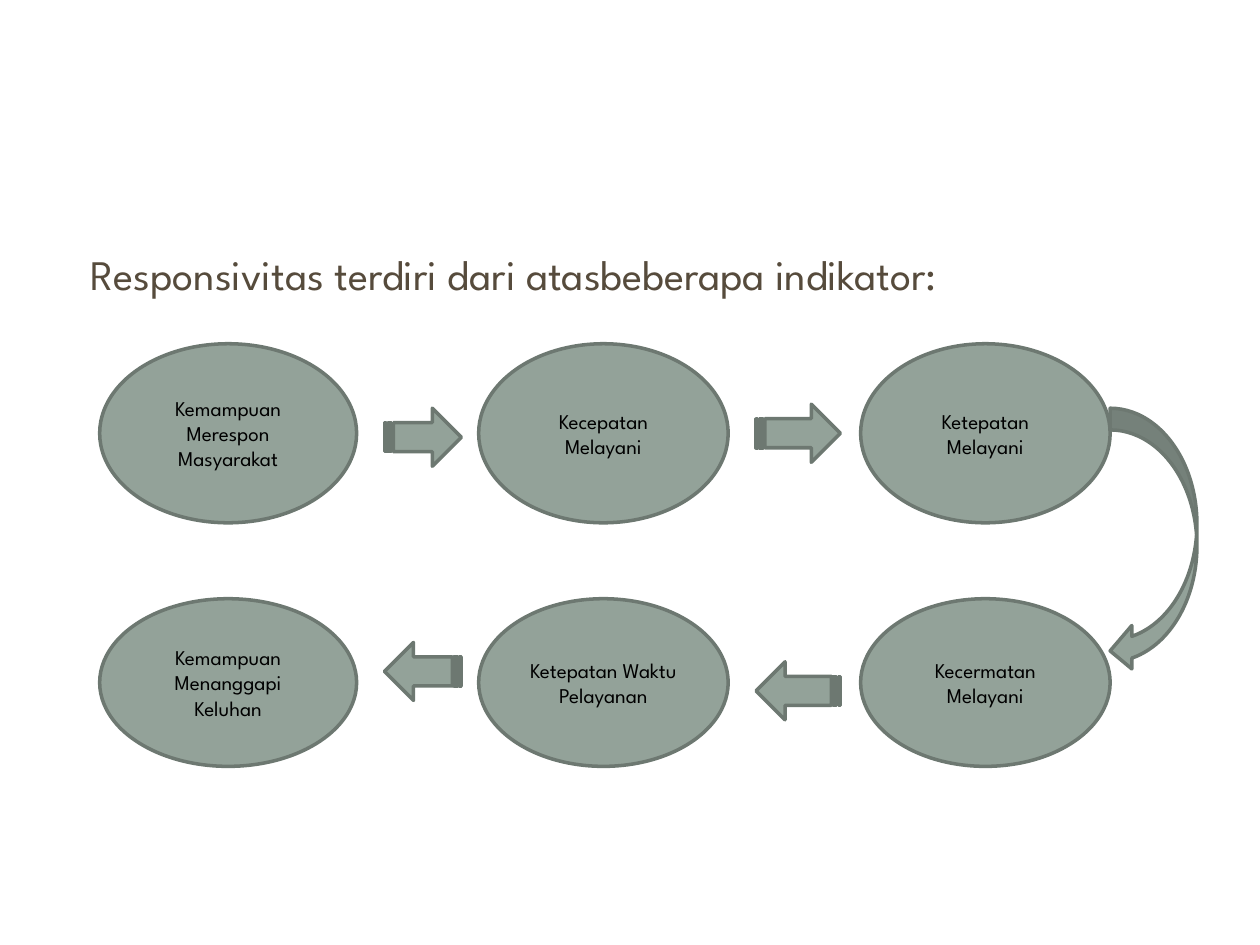
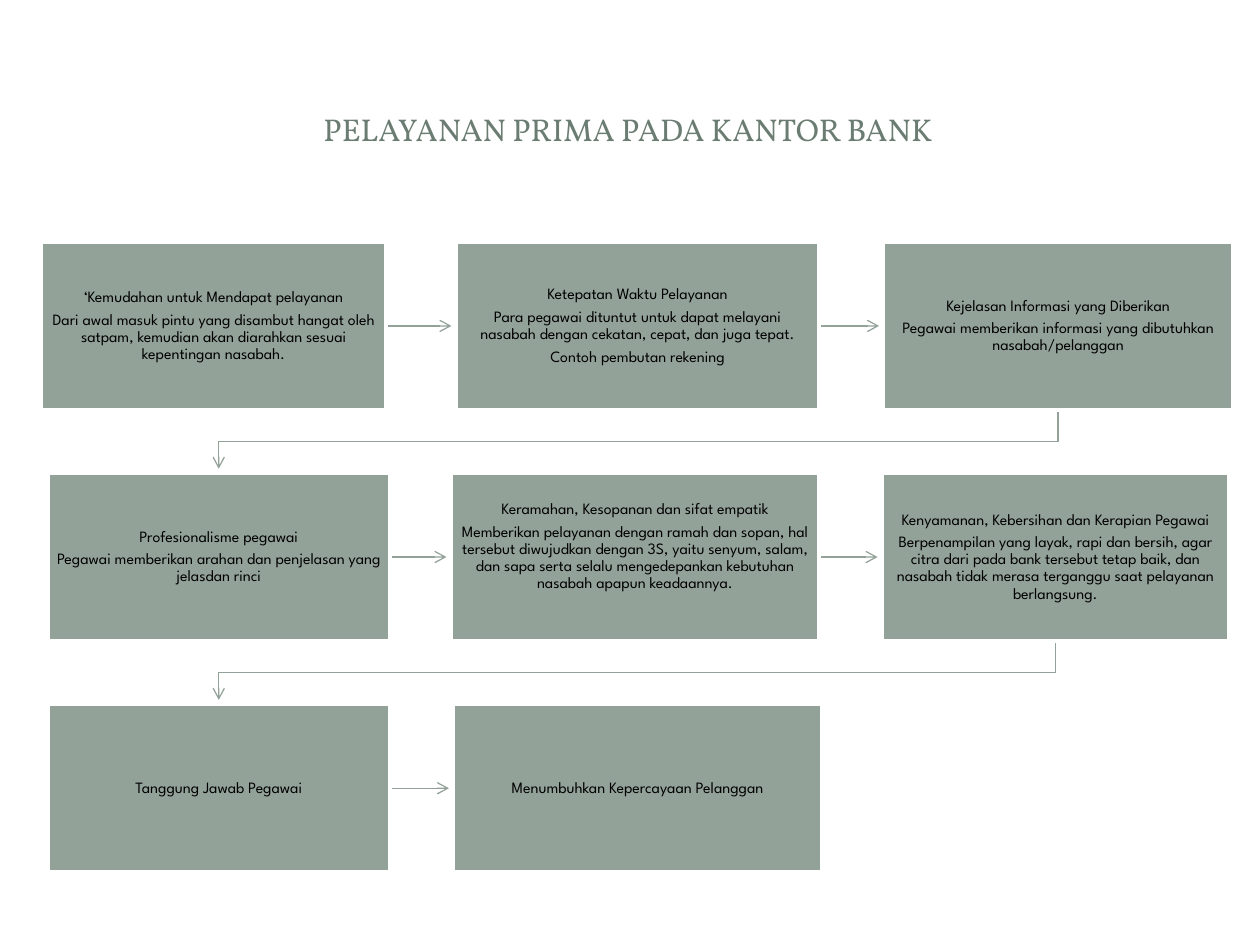
from dataclasses import dataclass
from itertools import pairwise

from lxml.etree import SubElement
from pptx import Presentation
from pptx.dml.color import RGBColor
from pptx.enum.shapes import MSO_CONNECTOR, MSO_SHAPE
from pptx.enum.text import MSO_ANCHOR, PP_ALIGN
from pptx.oxml.ns import qn
from pptx.util import Cm, Pt


@dataclass(frozen=True)
class Theme:
    sage: RGBColor = RGBColor(0x93, 0xA2, 0x99)
    sage_edge: RGBColor = RGBColor(0x6D, 0x78, 0x71)
    title: RGBColor = RGBColor(0x6B, 0x7D, 0x72)
    lead: RGBColor = RGBColor(0x56, 0x4B, 0x3C)
    ink: RGBColor = RGBColor(0, 0, 0)
    white: RGBColor = RGBColor(0xFF, 0xFF, 0xFF)
    title_font: str = "Vollkorn"
    body_font: str = "League Spartan"
    title_size: int = 18
    lead_size: int = 24
    indicator_size: int = 12
    card_size: int = 9
    outline: float = 2
    link: float = 0.75


THEME = Theme()


@dataclass(frozen=True)
class Box:
    """A rectangle in centimetres."""
    left: float
    top: float
    width: float
    height: float

    def inner(self, left, top, width, height):
        return Box(self.left + left, self.top + top, width, height)

    @property
    def right(self):
        return self.left + self.width

    @property
    def bottom(self):
        return self.top + self.height

    @property
    def center(self):
        return self.left + self.width / 2

    @property
    def middle(self):
        return self.top + self.height / 2

    def lengths(self):
        return [Cm(n) for n in (self.left, self.top, self.width, self.height)]


TITLE_BOX = Box(1.19, 1.14, 22.94, 2.9)
LEAD_BOX = Box(1.27, 4.88, 22.86, 1.6)
INDICATOR_BOX = Box(2.01, 6.93, 22.12, 8.52)
CARD_BOX = Box(0.84, 4.88, 24.01, 12.7)

# Left and width of each column, top and height of each row
INDICATOR_COLUMNS = [(0, 5.18), (7.64, 5.03), (15.34, 5.03)]
INDICATOR_ROWS = [(0, 3.61), (5.14, 3.38)]
INDICATORS = [
    ["Kemampuan Merespon Masyarakat", "Kecepatan Melayani", "Ketepatan Melayani"],
    ["Kemampuan Menanggapi Keluhan", "Ketepatan Waktu Pelayanan", "Kecermatan Melayani"],
]
# Left, top, width and rotation
STRIPED_ARROWS = [
    (5.74, 1.3, 1.55, 0), (13.23, 1.22, 1.7, 0),
    (13.23, 6.41, 1.7, 180), (5.74, 6.02, 1.55, 180),
]
ARROW_HEIGHT = 1.17

CARD_HEIGHT = 3.38
CARD_PITCH = 4.66
LINK_START_GAP = 0.05
LINK_END_GAP = 0.09
CARD_INSET = 0.18
RAISED_INSET = 0.6
# Left, width, paragraphs and bottom inset of each card
CARDS = [
    [
        (0, 6.93, ["‘Kemudahan untuk Mendapat pelayanan",
                   "Dari awal masuk pintu yang disambut hangat oleh satpam, "
                   "kemudian akan diarahkan sesuai kepentingan nasabah."], CARD_INSET),
        (8.35, 7.32, ["Ketepatan Waktu Pelayanan",
                      "Para pegawai dituntut untuk dapat melayani nasabah dengan "
                      "cekatan, cepat, dan juga tepat.",
                      "Contoh pembutan rekening"], CARD_INSET),
        (16.97, 7.04, ["Kejelasan Informasi yang Diberikan",
                       "Pegawai memberikan informasi yang dibutuhkan "
                       "nasabah/pelanggan"], CARD_INSET),
    ],
    [
        (0.13, 6.88, ["Profesionalisme pegawai",
                      "Pegawai memberikan arahan dan penjelasan yang jelasdan "
                      "rinci"], CARD_INSET),
        (8.25, 7.42, ["Keramahan, Kesopanan dan sifat empatik",
                      "Memberikan pelayanan dengan ramah dan sopan, hal tersebut "
                      "diwujudkan dengan 3S, yaitu senyum, salam, dan sapa serta "
                      "selalu mengedepankan kebutuhan nasabah apapun keadaannya."],
         RAISED_INSET),
        (16.94, 6.99, ["Kenyamanan, Kebersihan dan Kerapian Pegawai",
                       "Berpenampilan yang layak, rapi dan bersih, agar citra dari "
                       "pada bank tersebut tetap baik, dan nasabah tidak merasa "
                       "terganggu saat pelayanan berlangsung."], CARD_INSET),
    ],
    [
        (0.13, 6.88, ["Tanggung Jawab Pegawai"], CARD_INSET),
        (8.3, 7.42, ["Menumbuhkan Kepercayaan Pelanggan"], CARD_INSET),
    ],
]


def write(frame, paragraphs, size, color=THEME.ink, font=THEME.body_font,
          align=PP_ALIGN.CENTER, anchor=MSO_ANCHOR.MIDDLE):
    frame.word_wrap = True
    frame.vertical_anchor = anchor
    frame.text = "\n".join(paragraphs)
    for paragraph in frame.paragraphs:
        paragraph.alignment = align
        for run in paragraph.runs:
            run.font.name = font
            run.font.size = Pt(size)
            run.font.color.rgb = color


def add_filled(slide, kind, box, edge):
    shape = slide.shapes.add_shape(kind, *box.lengths())
    shape.shadow.inherit = False
    shape.fill.solid()
    shape.fill.fore_color.rgb = THEME.sage
    shape.line.color.rgb = edge
    shape.line.width = Pt(THEME.outline)
    return shape


def style_link(link):
    """Give a connector or open outline the thin line with an arrowhead."""
    link.line.color.rgb = THEME.sage
    link.line.width = Pt(THEME.link)
    SubElement(link.line._get_or_add_ln(), qn("a:tailEnd"), type="arrow")


def link_across(slide, start, end):
    y = Cm(start.middle)
    link = slide.shapes.add_connector(
        MSO_CONNECTOR.STRAIGHT, Cm(start.right + LINK_START_GAP), y,
        Cm(end.left - LINK_END_GAP), y)
    style_link(link)
    SubElement(link._element.spPr, qn("a:effectLst"))


def link_to_next_row(slide, start, end):
    turn = (start.bottom + end.top) / 2
    points = [(start.center, start.bottom + LINK_START_GAP), (start.center, turn),
              (end.center, turn), (end.center, end.top - LINK_END_GAP)]
    first, *rest = [(Cm(x), Cm(y)) for x, y in points]
    outline = slide.shapes.build_freeform(*first)
    outline.add_line_segments(rest, close=False)
    link = outline.convert_to_shape()
    link.fill.background()
    style_link(link)
    link.shadow.inherit = False


def add_title(slide, box, text):
    frame = slide.shapes.add_textbox(*box.lengths()).text_frame
    write(frame, [text], THEME.title_size, THEME.title, THEME.title_font)


def add_lead(slide, box, text):
    frame = slide.shapes.add_textbox(*box.lengths()).text_frame
    write(frame, [text], THEME.lead_size, THEME.lead,
          align=PP_ALIGN.LEFT, anchor=MSO_ANCHOR.TOP)
    frame.margin_left = Cm(0.56)
    frame.paragraphs[0].space_before = Pt(0.2 * THEME.lead_size)


def add_indicators(slide, box):
    for (top, height), names in zip(INDICATOR_ROWS, INDICATORS):
        for (left, width), name in zip(INDICATOR_COLUMNS, names):
            oval = add_filled(slide, MSO_SHAPE.OVAL,
                              box.inner(left, top, width, height), THEME.sage_edge)
            write(oval.text_frame, [name], THEME.indicator_size)
    for left, top, width, rotation in STRIPED_ARROWS:
        arrow = add_filled(slide, MSO_SHAPE.STRIPED_RIGHT_ARROW,
                           box.inner(left, top, width, ARROW_HEIGHT), THEME.sage_edge)
        arrow.rotation = rotation
    add_filled(slide, MSO_SHAPE.CURVED_LEFT_ARROW,
               box.inner(20.37, 1.3, 1.75, 5.33), THEME.sage_edge)


def add_card(slide, box, paragraphs, bottom_inset):
    frame = add_filled(slide, MSO_SHAPE.RECTANGLE, box, THEME.white).text_frame
    write(frame, paragraphs, THEME.card_size)
    frame.margin_left = frame.margin_right = frame.margin_top = Cm(CARD_INSET)
    frame.margin_bottom = Cm(bottom_inset)
    for paragraph in frame.paragraphs:
        paragraph.line_spacing = 0.9
        paragraph.space_after = Pt(0.35 * THEME.card_size)


def add_card_flow(slide, box):
    rows = []
    for index, row in enumerate(CARDS):
        places = []
        for left, width, paragraphs, bottom_inset in row:
            place = box.inner(left, index * CARD_PITCH, width, CARD_HEIGHT)
            add_card(slide, place, paragraphs, bottom_inset)
            places.append(place)
        for start, end in pairwise(places):
            link_across(slide, start, end)
        rows.append(places)
    for above, below in pairwise(rows):
        link_to_next_row(slide, above[-1], below[0])


def main():
    deck = Presentation()
    deck.slide_width, deck.slide_height = Cm(25.4), Cm(19.05)
    blank = deck.slide_layouts[6]

    responsiveness = deck.slides.add_slide(blank)
    add_lead(responsiveness, LEAD_BOX, "Responsivitas terdiri dari atasbeberapa indikator:")
    add_indicators(responsiveness, INDICATOR_BOX)

    service = deck.slides.add_slide(blank)
    add_title(service, TITLE_BOX, "PELAYANAN PRIMA PADA KANTOR BANK")
    add_card_flow(service, CARD_BOX)

    deck.save("out.pptx")


if __name__ == "__main__":
    main()
